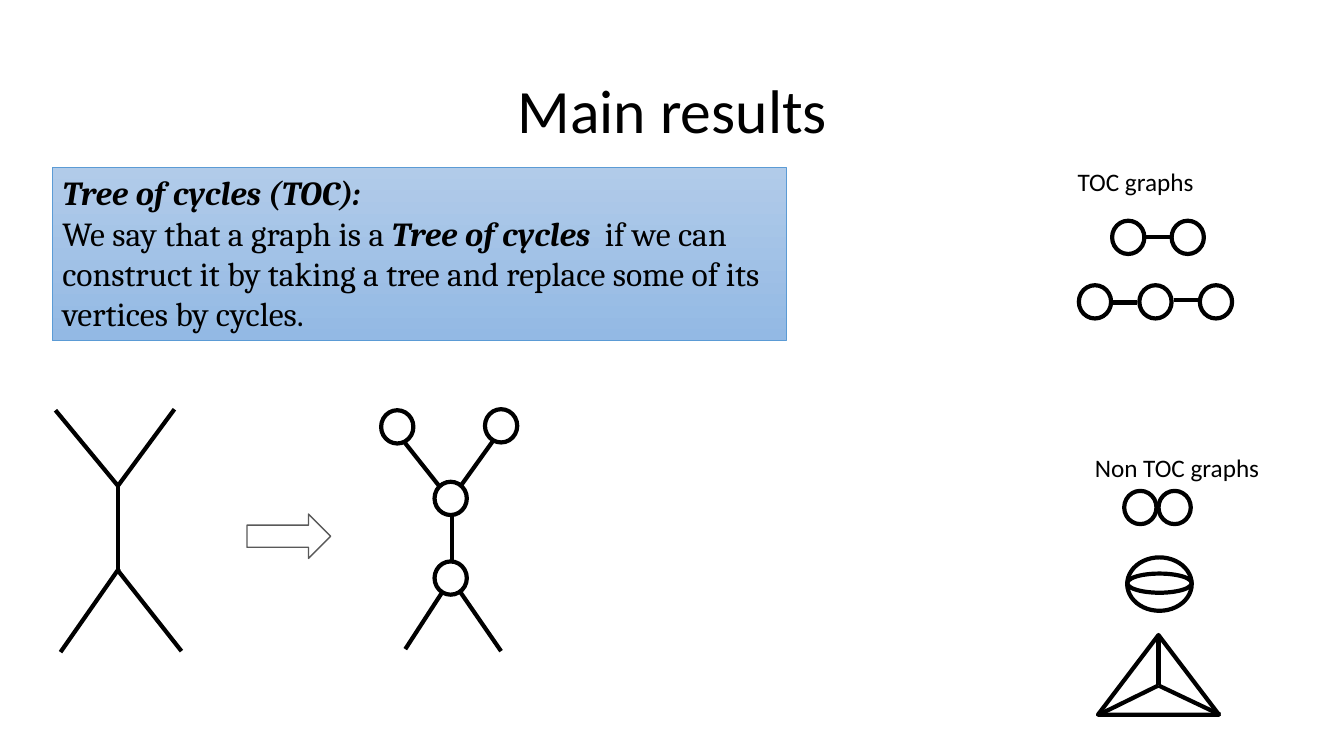
from dataclasses import dataclass

from lxml import etree
from pptx import Presentation
from pptx import util as u
from pptx.dml.color import RGBColor
from pptx.enum import shapes, text
from pptx.oxml import ns

SCALE = 9144  # EMU in one px, at 100 px to the inch
Shape = shapes.MSO_SHAPE
Box = tuple[int, int, int, int]
Line = tuple[int, int, int, int]


@dataclass(frozen=True)
class Theme:
    ink: str = "000000"
    paper: str = "FFFFFF"
    arrow: str = "595959"
    border: str = "5B9BD5"
    top: str = "B1CBE9"
    base: str = "93B9E4"
    sans: str = "Calibri"
    serif: str = "Cambria"
    title: int = 44
    body: int = 24
    label: int = 18
    stroke: float = 3


@dataclass(frozen=True)
class Figure:
    lines: tuple[Line, ...]
    nodes: tuple[tuple[int, int], ...] = ()
    outlines: tuple[tuple[Shape, Box], ...] = ()


@dataclass(frozen=True)
class Label:
    words: str
    box: Box


THEME = Theme()
NODE = (32, 33)

CHAINS = Figure(
    lines=((1137, 235, 1160, 235), (1104, 300, 1128, 300), (1164, 298, 1188, 298)),
    nodes=tuple((1103 + 59 * i, 219) for i in range(2))
    + tuple((1070 + 60 * i, 283) for i in range(3)),
)
OTHERS = Figure(
    lines=((1149, 630, 1149, 680), (1210, 709, 1149, 680), (1149, 680, 1092, 708)),
    nodes=tuple((1115 + 34 * i, 487) for i in range(2)),
    outlines=(
        (Shape.OVAL, (1118, 553, 64, 53)),
        (Shape.OVAL, (1118, 569, 64, 19)),
        (Shape.ISOSCELES_TRIANGLE, (1089, 630, 120, 79)),
    ),
)
TREE = Figure(
    lines=(
        (55, 407, 117, 482),
        (173, 406, 117, 482),
        (117, 478, 117, 567),
        (117, 566, 180, 646),
        (118, 564, 60, 647),
    ),
)
CYCLES = Figure(
    lines=(
        (399, 436, 441, 489),
        (490, 436, 452, 489),
        (448, 511, 448, 574),
        (457, 588, 497, 646),
        (439, 587, 402, 644),
    ),
    nodes=((431, 478), (481, 406), (378, 407), (431, 557)),
)
LABELS = (
    Label("TOC graphs", (1059, 160, 136, 40)),
    Label("Non TOC graphs", (1076, 444, 185, 40)),
)
# Each paragraph is a list of (words, stressed).
DEFINITION = (
    (("Tree of cycles (TOC):", True),),
    (
        ("We say that a graph is a ", False),
        ("Tree of cycles  ", True),
        (
            "if we can construct it by taking a tree and replace some of its "
            "vertices by cycles.",
            False,
        ),
    ),
)


def emu(lengths: tuple[int, ...]) -> list[u.Emu]:
    return [u.Emu(n * SCALE) for n in lengths]


def pen(item, color: str = THEME.ink, width: float = THEME.stroke) -> None:
    item.line.color.rgb = RGBColor.from_string(color)
    item.line.width = u.Pt(width)


def style(font, face: str, size: int) -> None:
    font.name = face
    font.size = u.Pt(size)
    font.color.rgb = RGBColor.from_string(THEME.ink)


def add_shape(tree, kind: Shape, box: Box, fill: str | None = None):
    shape = tree.add_shape(kind, *emu(box))
    shape.shadow.inherit = False
    if fill:
        shape.fill.solid()
        shape.fill.fore_color.rgb = RGBColor.from_string(fill)
    else:
        shape.fill.background()
    pen(shape)
    return shape


def add_line(tree, ends: Line) -> None:
    line = tree.add_connector(shapes.MSO_CONNECTOR.STRAIGHT, *emu(ends))
    pen(line)
    etree.SubElement(line._element.spPr, ns.qn("a:effectLst"))


def add_figure(slide, figure: Figure) -> None:
    group = slide.shapes.add_group_shape().shapes
    for ends in figure.lines:
        add_line(group, ends)
    for spot in figure.nodes:
        add_shape(group, Shape.OVAL, spot + NODE, THEME.paper)
    for kind, box in figure.outlines:
        add_shape(group, kind, box)


def add_label(slide, label: Label) -> None:
    frame = slide.shapes.add_textbox(*emu(label.box)).text_frame
    frame.word_wrap = False
    frame.auto_size = text.MSO_AUTO_SIZE.SHAPE_TO_FIT_TEXT
    frame.text = label.words
    style(frame.paragraphs[0].font, THEME.sans, THEME.label)


def set_title(slide, words: str) -> None:
    title = slide.shapes.title
    title.left, title.top, title.width, title.height = emu((92, 40, 1150, 145))
    frame = title.text_frame
    frame.text = words
    frame.vertical_anchor = text.MSO_ANCHOR.MIDDLE
    para = frame.paragraphs[0]
    para.alignment = text.PP_ALIGN.CENTER
    para.line_spacing = 0.9
    style(para.font, THEME.sans, THEME.title)


def add_definition(slide) -> None:
    panel = add_shape(slide.shapes, Shape.RECTANGLE, (52, 166, 728, 172))
    pen(panel, THEME.border, 0.5)
    panel.fill.gradient()
    panel.fill.gradient_angle = 270
    for stop, color in zip(panel.fill.gradient_stops, (THEME.top, THEME.base)):
        stop.color.rgb = RGBColor.from_string(color)
    frame = panel.text_frame
    frame.word_wrap = True
    frame.auto_size = text.MSO_AUTO_SIZE.SHAPE_TO_FIT_TEXT
    frame.vertical_anchor = text.MSO_ANCHOR.TOP
    for i, parts in enumerate(DEFINITION):
        para = frame.add_paragraph() if i else frame.paragraphs[0]
        para.alignment = text.PP_ALIGN.LEFT
        style(para.font, THEME.serif, THEME.body)
        for words, stressed in parts:
            run = para.add_run()
            run.text = words
            run.font.bold = run.font.italic = stressed


def main() -> None:
    deck = Presentation()
    deck.slide_width, deck.slide_height = emu((1333, 750))
    slide = deck.slides.add_slide(deck.slide_layouts.get_by_name("Title Only"))
    set_title(slide, "Main results")
    for figure in (CHAINS, OTHERS, TREE, CYCLES):
        add_figure(slide, figure)
    arrow = add_shape(slide.shapes, Shape.RIGHT_ARROW, (245, 510, 83, 44))
    pen(arrow, THEME.arrow, 1)
    for label in LABELS:
        add_label(slide, label)
    add_definition(slide)
    deck.save("out.pptx")


if __name__ == "__main__":
    main()
